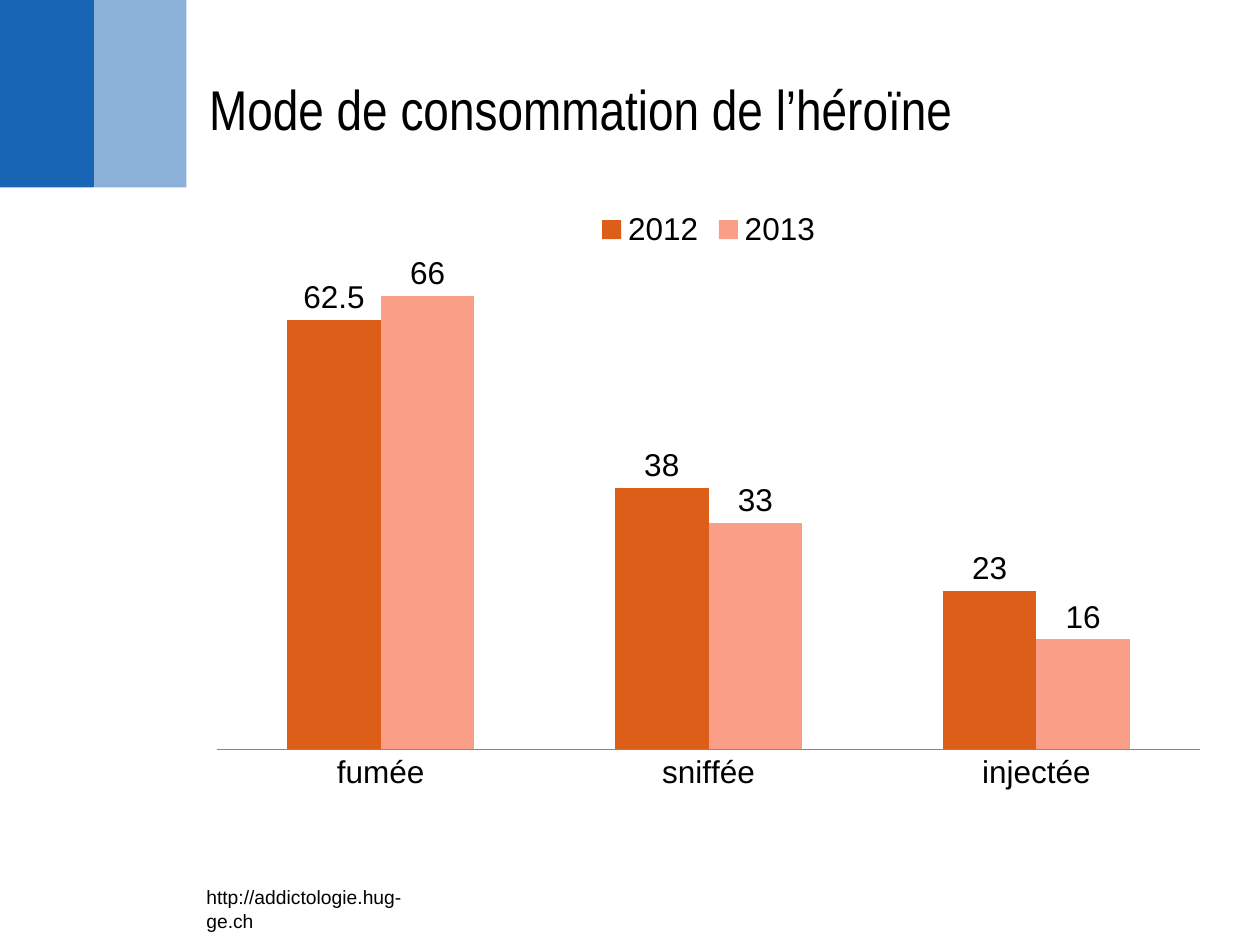
from lxml import etree
from pptx import Presentation
from pptx import util as u
from pptx.chart.data import CategoryChartData
from pptx.dml.color import RGBColor
from pptx.enum import chart as charts, shapes, text
from pptx.oxml import parse_xml
from pptx.oxml.ns import nsdecls, qn

TITLE = "Mode de consommation de l’héroïne"
FOOTER = "http://addictologie.hug-ge.ch"
CATEGORIES = ["fumée", "sniffée", "injectée"]
SERIES = [("2012", (62.5, 38, 23), "orange"), ("2013", (66, 33, 16), "salmon")]
COLORS = {"blue": "1864B5", "line": "0C72C0", "orange": "DD5E18",
          "salmon": "FA9E87", "axis": "868686", "black": "000000"}
BAND_WIDTH, BAND_HEIGHT = 1.88, 3.8
BAND_OPACITY = [100, 50]
PLOT_AREA = {"x": 0.02, "y": 0.12, "w": 0.96, "h": 0.8}


def color(name):
    return RGBColor.from_string(COLORS[name])


def set_font(font, size, name="Arial"):
    font.size = u.Pt(size)
    font.name = name
    font.bold = False
    font.color.rgb = color("black")


def write(shape, words, size, font_name="Arial"):
    frame = shape.text_frame
    frame.text = words
    frame.word_wrap = True
    frame.auto_size = text.MSO_AUTO_SIZE.NONE
    frame.vertical_anchor = text.MSO_ANCHOR.TOP
    paragraph = frame.paragraphs[0]
    paragraph.alignment = text.PP_ALIGN.LEFT
    set_font(paragraph.runs[0].font, size, font_name)


def add_bands(slide):
    edge = slide.shapes.add_connector(
        shapes.MSO_CONNECTOR.STRAIGHT,
        u.Cm(BAND_WIDTH), 0, u.Cm(BAND_WIDTH), u.Cm(BAND_HEIGHT - 0.04))
    edge.line.color.rgb = color("line")
    edge.line.width = u.Pt(1)
    etree.SubElement(edge._element.spPr, qn("a:effectLst"))
    for index, opacity in enumerate(BAND_OPACITY):
        band = slide.shapes.add_shape(
            shapes.MSO_SHAPE.RECTANGLE, u.Cm(index * BAND_WIDTH), u.Cm(-0.02),
            u.Cm(BAND_WIDTH), u.Cm(BAND_HEIGHT))
        band.shadow.inherit = False
        band.fill.solid()
        band.fill.fore_color.rgb = color("blue")
        band.line.fill.background()
        if opacity < 100:
            fill = band._element.spPr.find(qn("a:solidFill"))
            etree.SubElement(fill[0], qn("a:alpha"), val=str(opacity * 1000))


def fix_plot_area(chart):
    """Place the inner plot area by fractions of the chart's size."""
    sizes = "".join(f'<c:{key} val="{value}"/>' for key, value in PLOT_AREA.items())
    layout = parse_xml(
        f'<c:layout {nsdecls("c")}><c:manualLayout><c:layoutTarget val="inner"/>'
        f'<c:xMode val="edge"/><c:yMode val="edge"/>{sizes}'
        '</c:manualLayout></c:layout>')
    plot_area = chart._chartSpace.chart.plotArea
    for old in plot_area.findall(qn("c:layout")):
        plot_area.remove(old)
    plot_area.insert(0, layout)


def add_chart(slide):
    data = CategoryChartData()
    data.categories = CATEGORIES
    for name, values, _ in SERIES:
        data.add_series(name, values)
    chart = slide.shapes.add_chart(
        charts.XL_CHART_TYPE.COLUMN_CLUSTERED,
        u.Cm(3.96), u.Cm(3.96), u.Cm(20.65), u.Cm(12.12), data).chart
    set_font(chart.font, 18)
    chart.has_title = False
    chart.has_legend = True
    chart.legend.position = charts.XL_LEGEND_POSITION.TOP
    chart.legend.include_in_layout = False

    plot = chart.plots[0]
    plot.gap_width = 150
    plot.overlap = 0
    plot.vary_by_categories = False
    for series, (_, _, fill_name) in zip(plot.series, SERIES):
        series.format.fill.solid()
        series.format.fill.fore_color.rgb = color(fill_name)
        labels = series.data_labels
        labels.show_value = True
        labels.position = charts.XL_LABEL_POSITION.OUTSIDE_END

    category_axis, value_axis = chart.category_axis, chart.value_axis
    category_axis.major_tick_mark = charts.XL_TICK_MARK.NONE
    category_axis.format.line.color.rgb = color("axis")
    category_axis.format.line.width = u.Pt(1)
    value_axis.visible = False
    value_axis.has_major_gridlines = False
    value_axis.minimum_scale, value_axis.maximum_scale = 0, 70
    fix_plot_area(chart)


def main():
    presentation = Presentation()
    presentation.slide_width, presentation.slide_height = u.Cm(25.4), u.Cm(19.05)
    slide = presentation.slides.add_slide(presentation.slide_layouts[5])
    add_bands(slide)

    title = slide.shapes.title
    title.left, title.top = u.Cm(3.96), u.Cm(1.37)
    title.width, title.height = u.Cm(18.92), u.Cm(1.63)
    write(title, TITLE, 32, "Arial Narrow")

    add_chart(slide)
    footer = slide.shapes.add_textbox(u.Cm(3.91), u.Cm(17.73), u.Cm(5.28), u.Cm(0.74))
    write(footer, FOOTER, 11)
    presentation.save("out.pptx")


if __name__ == "__main__":
    main()
